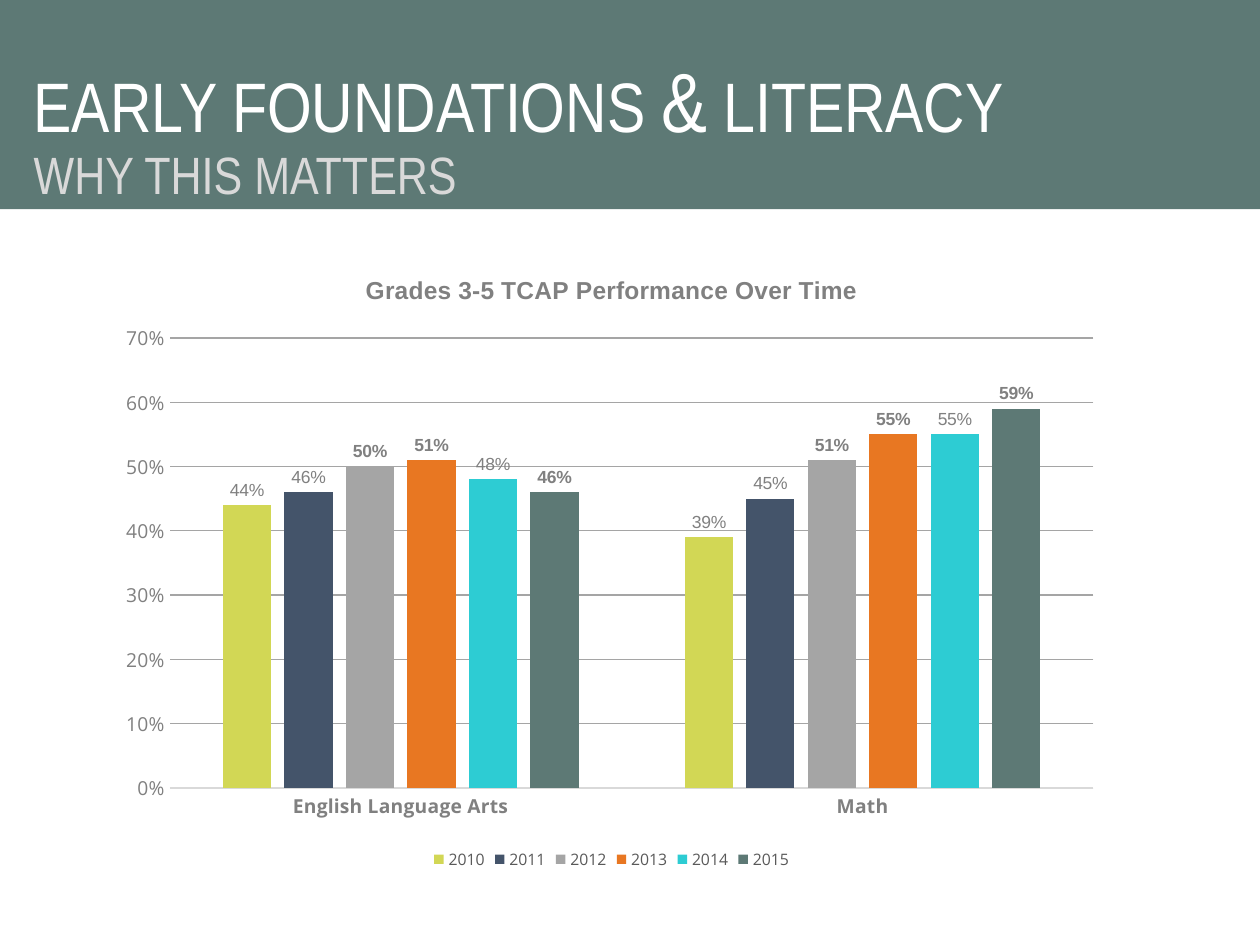
from lxml import etree
from pptx import Presentation
from pptx.chart.data import CategoryChartData
from pptx.dml.color import RGBColor
from pptx.enum.chart import XL_CHART_TYPE, XL_LABEL_POSITION, XL_LEGEND_POSITION, XL_TICK_MARK
from pptx.enum.shapes import MSO_SHAPE
from pptx.enum.text import MSO_ANCHOR
from pptx.util import Cm, Pt

COLUMN_CLUSTERED = XL_CHART_TYPE.COLUMN_CLUSTERED
OUTSIDE_END = XL_LABEL_POSITION.OUTSIDE_END
BOTTOM = XL_LEGEND_POSITION.BOTTOM
NO_TICK = XL_TICK_MARK.NONE
RECTANGLE = MSO_SHAPE.RECTANGLE
TOP, MIDDLE = MSO_ANCHOR.TOP, MSO_ANCHOR.MIDDLE

WHITE = RGBColor(0xFF, 0xFF, 0xFF)
LIGHT_GRAY = RGBColor(0xD9, 0xD9, 0xD9)
SILVER = RGBColor(0xA5, 0xA5, 0xA5)
GRAY = RGBColor(0x80, 0x80, 0x80)
DARK_GRAY = RGBColor(0x59, 0x59, 0x59)
SAGE = RGBColor(0x5D, 0x79, 0x75)
LIME = RGBColor(0xD2, 0xD7, 0x55)
NAVY = RGBColor(0x44, 0x54, 0x6A)
ORANGE = RGBColor(0xE8, 0x77, 0x22)
TURQUOISE = RGBColor(0x2D, 0xCC, 0xD3)

TITLE_RUNS = [("EARLY FOUNDATIONS ", 40), ("&", 48), (" LITERACY ", 40)]
SUBTITLE_RUNS = [("WHY THIS MATTERS", 30)]
CHART_TITLE = "Grades 3-5 TCAP Performance Over Time"
SUBJECTS = ["English Language Arts", "Math"]
YEARS = [
    ("2010", (0.44, 0.39), LIME, False),
    ("2011", (0.46, 0.45), NAVY, False),
    ("2012", (0.50, 0.51), SILVER, True),
    ("2013", (0.51, 0.55), ORANGE, True),
    ("2014", (0.48, 0.55), TURQUOISE, False),
    ("2015", (0.46, 0.59), SAGE, True),
]
PLOT_LAYOUT = {"x": 0.06, "y": 0.14, "w": 0.92, "h": 0.72}


def set_font(font, name, size, color, bold=False):
    font.name = name
    font.size = Pt(size)
    font.bold = bold
    font.color.rgb = color


def add_heading(slide, runs, box, color, anchor):
    frame = slide.shapes.add_textbox(*box).text_frame
    frame.word_wrap = True
    frame.vertical_anchor = anchor
    paragraph = frame.paragraphs[0]
    paragraph.line_spacing = 1.5
    for text, size in runs:
        run = paragraph.add_run()
        run.text = text
        set_font(run.font, "Arial Narrow", size, color)


def set_plot_layout(chart):
    plot_area = chart.plots[0]._element.getparent()
    namespace = etree.QName(plot_area).namespace
    for old_layout in plot_area.findall(f"{{{namespace}}}layout"):
        plot_area.remove(old_layout)
    layout = etree.Element(f"{{{namespace}}}layout")
    manual = etree.SubElement(layout, f"{{{namespace}}}manualLayout")
    settings = {"layoutTarget": "inner", "xMode": "edge", "yMode": "edge", **PLOT_LAYOUT}
    for tag, value in settings.items():
        etree.SubElement(manual, f"{{{namespace}}}{tag}").set("val", str(value))
    plot_area.insert(0, layout)


def add_performance_chart(slide):
    data = CategoryChartData(number_format="0%")
    data.categories = SUBJECTS
    for year, values, _, _ in YEARS:
        data.add_series(year, values)
    chart = slide.shapes.add_chart(
        COLUMN_CLUSTERED, Cm(2.21), Cm(5.05), Cm(20.24), Cm(12.6), data
    ).chart
    set_font(chart.font, "Calibri", 10, GRAY)

    chart.has_title = True
    title = chart.chart_title
    title.include_in_layout = False
    title.text_frame.text = CHART_TITLE
    set_font(title.text_frame.paragraphs[0].font, "Arial", 14, GRAY, True)

    chart.has_legend = True
    chart.legend.position = BOTTOM
    chart.legend.include_in_layout = False
    set_font(chart.legend.font, "Open Sans", 9, DARK_GRAY)

    for axis, bold in ((chart.category_axis, True), (chart.value_axis, False)):
        axis.major_tick_mark = axis.minor_tick_mark = NO_TICK
        set_font(axis.tick_labels.font, "Open Sans", 11, GRAY, bold)
    category_line = chart.category_axis.format.line
    category_line.color.rgb = LIGHT_GRAY
    category_line.width = Pt(0.75)
    value_axis = chart.value_axis
    value_axis.minimum_scale, value_axis.maximum_scale = 0, 0.7
    value_axis.major_unit = 0.1
    value_axis.tick_labels.number_format = "0%"
    value_axis.tick_labels.number_format_is_linked = False
    value_axis.format.line.fill.background()
    gridline = value_axis.major_gridlines.format.line
    gridline.color.rgb = SILVER
    gridline.width = Pt(0.75)

    plot = chart.plots[0]
    plot.gap_width, plot.overlap = 219, -27
    plot.vary_by_categories = False
    for series, (_, _, color, bold) in zip(plot.series, YEARS):
        series.format.fill.solid()
        series.format.fill.fore_color.rgb = color
        labels = series.data_labels
        labels.show_value = True
        labels.number_format = "0%"
        labels.number_format_is_linked = False
        labels.position = OUTSIDE_END
        set_font(labels.font, "Arial", 10, GRAY, bold)
    set_plot_layout(chart)


presentation = Presentation()
presentation.slide_width, presentation.slide_height = Cm(25.4), Cm(19.05)
slide = presentation.slides.add_slide(presentation.slide_layouts[6])

add_performance_chart(slide)

banner = slide.shapes.add_shape(RECTANGLE, Cm(-0.53), Cm(0), Cm(26.39), Cm(4.22))
banner.shadow.inherit = False
banner.fill.solid()
banner.fill.fore_color.rgb = SAGE
banner.line.fill.background()

title_box = (Cm(0.43), Cm(0.25), Cm(25.45), Cm(2.49))
subtitle_box = (Cm(0.43), Cm(2.11), Cm(19.13), Cm(2.18))
add_heading(slide, TITLE_RUNS, title_box, WHITE, MIDDLE)
add_heading(slide, SUBTITLE_RUNS, subtitle_box, LIGHT_GRAY, TOP)

presentation.save("out.pptx")
